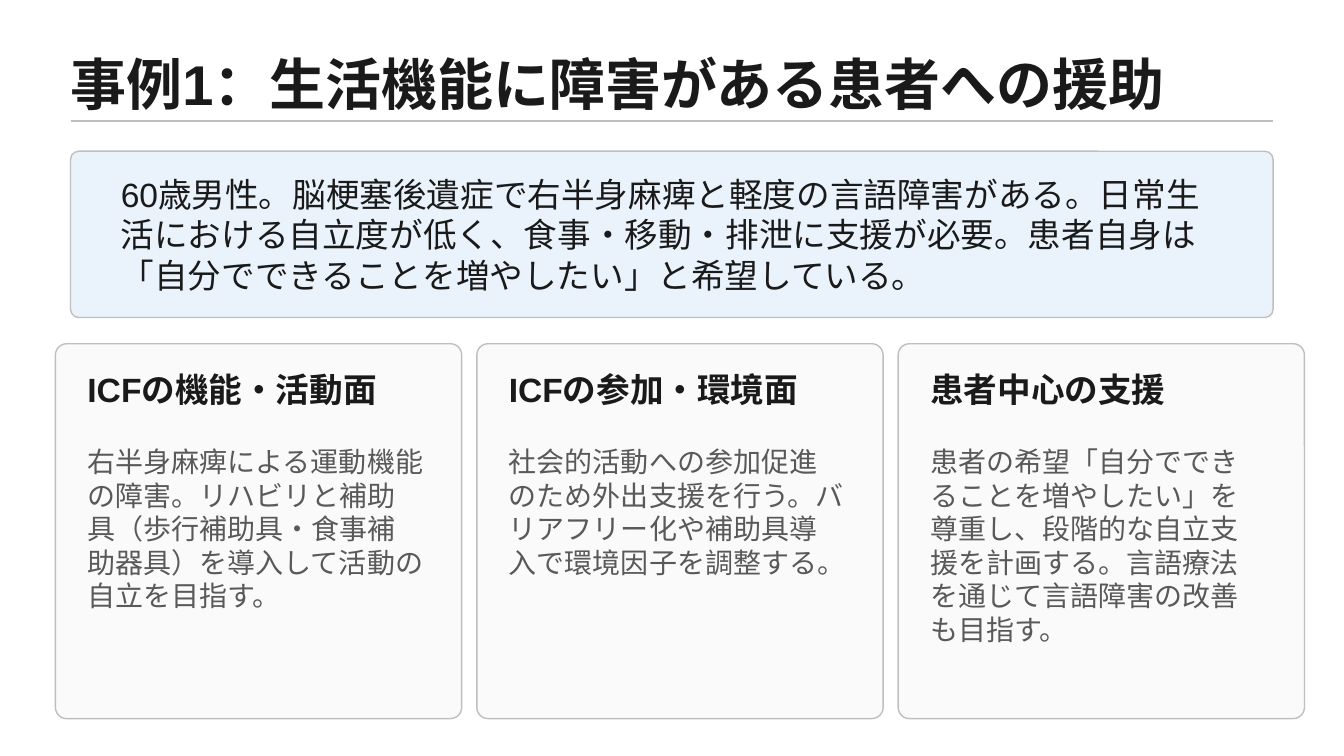
from lxml.etree import SubElement
from pptx import Presentation
from pptx.dml.color import RGBColor
from pptx.enum.shapes import MSO_CONNECTOR, MSO_SHAPE
from pptx.enum.text import MSO_ANCHOR, MSO_AUTO_SIZE, PP_ALIGN
from pptx.oxml.ns import qn
from pptx.util import Pt

INK = RGBColor(0x1A, 0x1A, 0x1A)
GRAY = RGBColor(0x59, 0x59, 0x59)
RULE = RGBColor(0xBF, 0xBF, 0xBF)
PALE_BLUE = RGBColor(0xEA, 0xF3, 0xFB)
OFF_WHITE = RGBColor(0xFA, 0xFA, 0xFA)

TITLE = "事例1：生活機能に障害がある患者への援助"
CASE = (
    "60歳男性。脳梗塞後遺症で右半身麻痺と軽度の言語障害がある。"
    "日常生活における自立度が低く、食事・移動・排泄に支援が必要。"
    "患者自身は「自分でできることを増やしたい」と希望している。"
)
CARDS = [
    ("ICFの機能・活動面",
     "右半身麻痺による運動機能の障害。リハビリと補助具（歩行補助具・食事補助器具）"
     "を導入して活動の自立を目指す。"),
    ("ICFの参加・環境面",
     "社会的活動への参加促進のため外出支援を行う。"
     "バリアフリー化や補助具導入で環境因子を調整する。"),
    ("患者中心の支援",
     "患者の希望「自分でできることを増やしたい」を尊重し、段階的な自立支援を計画する。"
     "言語療法を通じて言語障害の改善も目指す。"),
]

MARGIN, CONTENT_WIDTH = 50.4, 859
CASE_TOP, CASE_HEIGHT, CASE_INDENT = 108, 118.8, 28.8
CARD_LEFT, CARD_TOP, CARD_PITCH = 39.6, 245.5, 301
CARD_WIDTH, CARD_HEIGHT = 290.2, 267.8
CARD_INDENT, CARD_TEXT_WIDTH = 15.8, 254.2


def write(frame, text, size=24, color=INK, bold=False, anchor=MSO_ANCHOR.TOP):
    frame.word_wrap = True
    frame.auto_size = MSO_AUTO_SIZE.NONE
    frame.vertical_anchor = anchor
    para = frame.paragraphs[0]
    para.alignment = PP_ALIGN.LEFT
    span = para.add_run()
    span.text = text
    span.font.name = "Arial"
    span.font.size = Pt(size)
    span.font.bold = bold
    span.font.color.rgb = color


class SlideBuilder:
    """Holds the current slide and its line style."""

    def __init__(self, page, line_color=RULE, line_width=1):
        self.page = page
        self.line_color = line_color
        self.line_width = line_width

    def style_line(self, line):
        line.color.rgb = self.line_color
        line.width = Pt(self.line_width)

    def title(self, text, left, top, width, height):
        box = self.page.shapes.title
        box.left, box.top = Pt(left), Pt(top)
        box.width, box.height = Pt(width), Pt(height)
        frame = box.text_frame
        frame.margin_left = frame.margin_right = 0
        frame.margin_top = frame.margin_bottom = 0
        write(frame, text, size=40, bold=True, anchor=MSO_ANCHOR.MIDDLE)

    def rule(self, left, top, width):
        connector = self.page.shapes.add_connector(
            MSO_CONNECTOR.STRAIGHT, Pt(left), Pt(top), Pt(left + width), Pt(top))
        self.style_line(connector.line)
        SubElement(connector._element.spPr, qn("a:effectLst"))

    def panel(self, left, top, width, height, fill, rounding):
        box = self.page.shapes.add_shape(
            MSO_SHAPE.ROUNDED_RECTANGLE, Pt(left), Pt(top), Pt(width), Pt(height))
        box.adjustments[0] = rounding
        box.shadow.inherit = False
        box.fill.solid()
        box.fill.fore_color.rgb = fill
        self.style_line(box.line)

    def text(self, text, left, top, width, height, **style):
        box = self.page.shapes.add_textbox(Pt(left), Pt(top), Pt(width), Pt(height))
        write(box.text_frame, text, **style)

    def card(self, heading, body, left):
        self.panel(left, CARD_TOP, CARD_WIDTH, CARD_HEIGHT, OFF_WHITE, 0.03)
        text_left = left + CARD_INDENT
        self.text(heading, text_left, CARD_TOP + 14.4, CARD_TEXT_WIDTH, 64.8, bold=True)
        self.text(body, text_left, CARD_TOP + 68.4, CARD_TEXT_WIDTH, 166.3,
                  size=20, color=GRAY)


def main():
    deck = Presentation()
    deck.slide_width, deck.slide_height = Pt(960), Pt(540)
    title_only = deck.slide_layouts[5]
    builder = SlideBuilder(deck.slides.add_slide(title_only))

    builder.title(TITLE, MARGIN, 30.2, CONTENT_WIDTH, 59)
    builder.rule(MARGIN, 86.4, CONTENT_WIDTH)
    builder.panel(MARGIN, CASE_TOP, CONTENT_WIDTH, CASE_HEIGHT, PALE_BLUE, 0.05)
    builder.text(CASE, MARGIN + CASE_INDENT, CASE_TOP, CONTENT_WIDTH - 2 * CASE_INDENT,
                 CASE_HEIGHT, anchor=MSO_ANCHOR.MIDDLE)
    for index, (heading, body) in enumerate(CARDS):
        builder.card(heading, body, CARD_LEFT + index * CARD_PITCH)

    deck.save("out.pptx")


if __name__ == "__main__":
    main()
